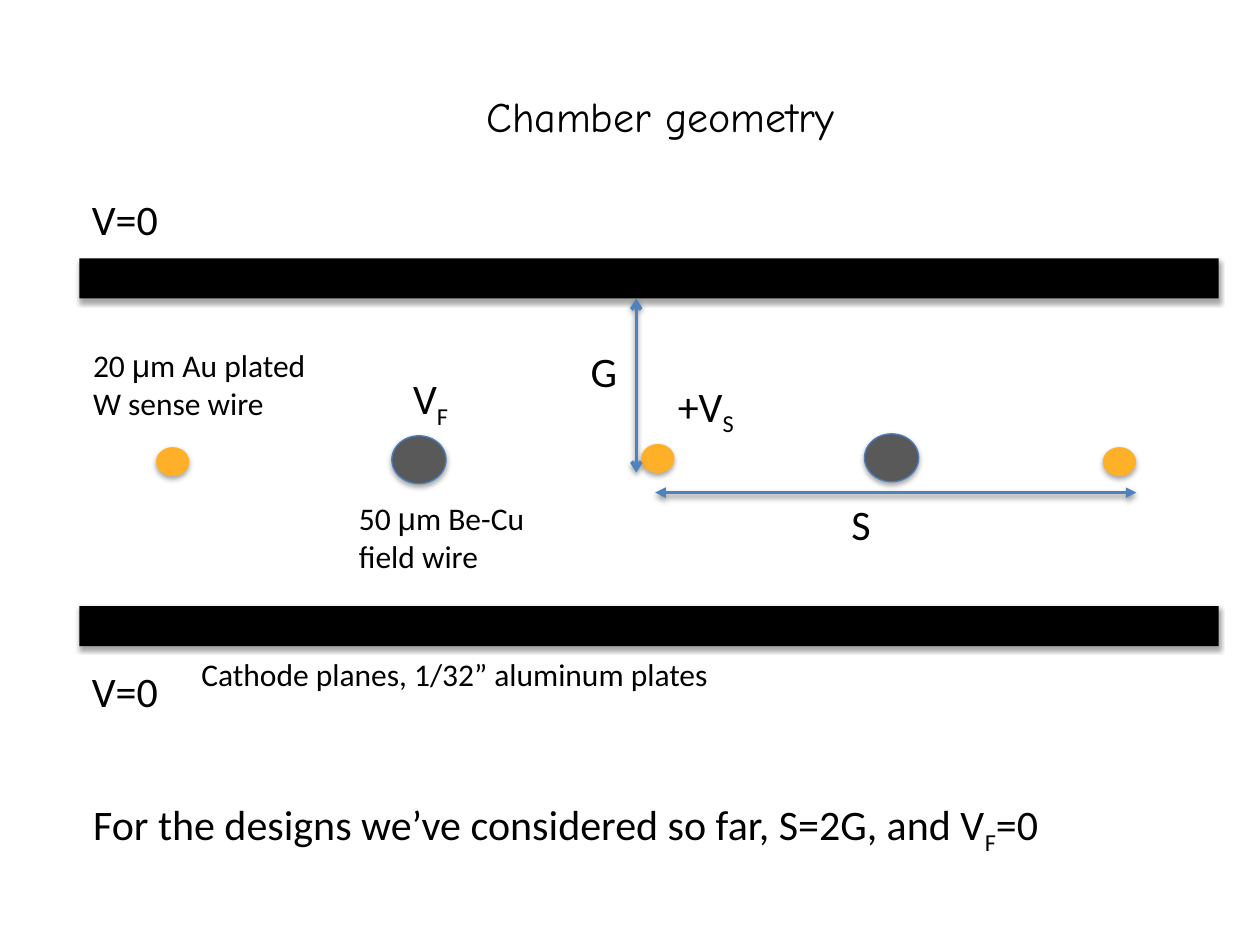
from dataclasses import dataclass
from typing import NamedTuple

from lxml.etree import SubElement
from pptx import Presentation
from pptx.dml.color import RGBColor
from pptx.enum.shapes import MSO_CONNECTOR, MSO_SHAPE
from pptx.enum.text import MSO_AUTO_SIZE, PP_ALIGN
from pptx.oxml.ns import qn
from pptx.util import Pt


@dataclass(frozen=True)
class Theme:
    text: RGBColor = RGBColor(0x00, 0x00, 0x00)
    plate: RGBColor = RGBColor(0x00, 0x00, 0x00)
    sense: RGBColor = RGBColor(0xFF, 0xB0, 0x29)
    field: RGBColor = RGBColor(0x59, 0x59, 0x59)
    outline: RGBColor = RGBColor(0x4B, 0x7E, 0xBC)
    arrow: RGBColor = RGBColor(0x4F, 0x81, 0xBD)
    body_font: str = "Calibri"
    greek_font: str = "Arial"
    title_font: str = "Comic Neue"
    large: float = 24
    small: float = 18


THEME = Theme()


class Body(NamedTuple):
    kind: MSO_SHAPE
    left: float
    top: float
    width: float
    height: float
    fill: RGBColor
    outline: RGBColor | None = None


class Arrow(NamedTuple):
    x1: float
    y1: float
    x2: float
    y2: float
    head: str


class Piece(NamedTuple):
    text: str
    font: str = THEME.body_font
    sub: bool = False


class Label(NamedTuple):
    left: float
    top: float
    width: float
    height: float
    pieces: list[Piece]
    size: float = THEME.large
    align: PP_ALIGN = PP_ALIGN.LEFT


def add_shadow(sp, distance: float, opacity: int) -> None:
    effects = SubElement(sp._element.spPr, qn("a:effectLst"))
    shadow = SubElement(effects, qn("a:outerShdw"), blurRad=str(Pt(3.1)),
                        dist=str(Pt(distance)), dir="5400000", rotWithShape="0")
    color = SubElement(shadow, qn("a:srgbClr"), val="000000")
    SubElement(color, qn("a:alpha"), val=str(opacity * 1000))


def add_body(s, body: Body) -> None:
    sp = s.shapes.add_shape(body.kind, *map(Pt, body[1:5]))
    sp.fill.solid()
    sp.fill.fore_color.rgb = body.fill
    if body.outline is None:
        sp.line.fill.background()
    else:
        sp.line.color.rgb = body.outline
        sp.line.width = Pt(0.75)
    add_shadow(sp, 1.8, 35)


def add_arrow(s, arrow: Arrow) -> None:
    sp = s.shapes.add_connector(MSO_CONNECTOR.STRAIGHT, *map(Pt, arrow[:4]))
    sp.line.color.rgb = THEME.arrow
    sp.line.width = Pt(2)
    ln = sp.line._get_or_add_ln()
    for end in ("a:headEnd", "a:tailEnd"):
        SubElement(ln, qn(end), type=arrow.head)
    add_shadow(sp, 1.6, 38)


def add_label(s, label: Label) -> None:
    tf = s.shapes.add_textbox(*map(Pt, label[:4])).text_frame
    tf.word_wrap = True
    tf.auto_size = MSO_AUTO_SIZE.SHAPE_TO_FIT_TEXT
    p = tf.paragraphs[0]
    p.alignment = label.align
    for piece in label.pieces:
        r = p.add_run()
        r.text = piece.text
        r.font.name = piece.font
        r.font.size = Pt(label.size)
        r.font.color.rgb = THEME.text
        if piece.sub:
            r.font._element.set("baseline", "-25000")


# Cathode planes, sense wires and field wires
PLATES = [Body(MSO_SHAPE.RECTANGLE, 45.4, top, 651, 23, THEME.plate)
          for top in (147.6, 346.3)]
SENSE_WIRES = [Body(MSO_SHAPE.OVAL, left, top, 19, 16.6, THEME.sense)
               for left, top in ((89.2, 255.5), (366.5, 253.7), (630.2, 255.5))]
FIELD_WIRES = [Body(MSO_SHAPE.OVAL, left, top, 31, 27.4, THEME.field, THEME.outline)
               for left, top in ((223.9, 249), (494, 247.9))]

# Wire spacing S and gap G
ARROWS = [Arrow(374.4, 281.5, 649.4, 281.5, "triangle"),
          Arrow(363.6, 270, 363.6, 170.6, "arrow")]

MU = Piece("μ", THEME.greek_font)
SUB_F = Piece("F", sub=True)
SUB_S = Piece("S", sub=True)

LABELS = [
    Label(127.4, 48.2, 499.7, 36, [Piece("Chamber geometry", THEME.title_font)],
          align=PP_ALIGN.CENTER),
    *(Label(45.4, top, 57, 36, [Piece("V=0")]) for top in (107.3, 376.6)),
    Label(479.5, 281.5, 45.4, 36, [Piece("S")]),
    Label(330.5, 193.7, 33, 36, [Piece("G")]),
    Label(380.2, 213.8, 57, 36, [Piece("+V"), SUB_S]),
    Label(229, 209.5, 57, 36, [Piece("V"), SUB_F]),
    Label(46.1, 194.4, 152, 51, [Piece("20 "), MU, Piece("m Au plated W sense wire")],
          THEME.small),
    Label(198, 281.5, 118.8, 51, [Piece("50 "), MU, Piece("m Be-Cu field wire")],
          THEME.small),
    Label(108, 370.8, 551.5, 29, [Piece("Cathode planes, 1/32” aluminum plates")],
          THEME.small),
    Label(46.1, 452.9, 579.6, 36,
          [Piece("For the designs we’ve considered so far, S=2G, and V"), SUB_F,
           Piece("=0")]),
]


def main() -> None:
    prs = Presentation()
    prs.slide_width, prs.slide_height = Pt(720), Pt(540)
    s = prs.slides.add_slide(prs.slide_layouts[6])
    for body in PLATES + SENSE_WIRES + FIELD_WIRES:
        add_body(s, body)
    for arrow in ARROWS:
        add_arrow(s, arrow)
    for label in LABELS:
        add_label(s, label)
    prs.save("out.pptx")


if __name__ == "__main__":
    main()
